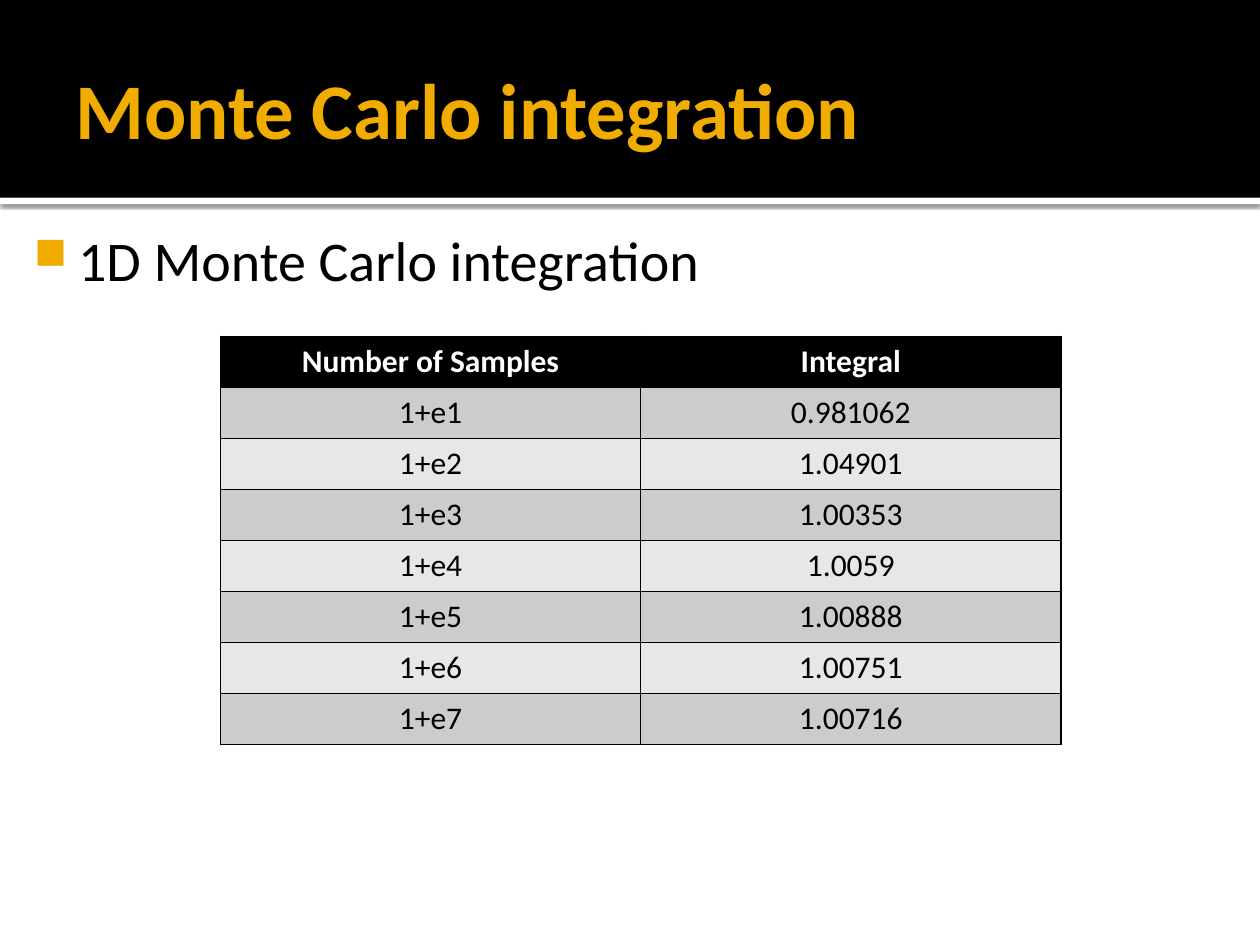
from dataclasses import dataclass

from lxml import etree
from pptx import Presentation
from pptx.dml.color import RGBColor
from pptx.enum.shapes import MSO_SHAPE
from pptx.enum.text import MSO_ANCHOR, PP_ALIGN
from pptx.oxml.ns import qn
from pptx.util import Inches, Pt

RECTANGLE = MSO_SHAPE.RECTANGLE
TOP, MIDDLE = MSO_ANCHOR.TOP, MSO_ANCHOR.MIDDLE
LEFT, CENTER = PP_ALIGN.LEFT, PP_ALIGN.CENTER


@dataclass(frozen=True)
class Theme:
    font: str = "Calibri"
    black: str = "000000"
    white: str = "FFFFFF"
    accent: str = "F0AD00"
    bands: tuple = ("CCCCCC", "E7E7E7")
    title_size: int = 45
    body_size: int = 32
    table_size: int = 18


THEME = Theme()
RESULTS = [
    ("Number of Samples", "Integral"),
    ("1+e1", "0.981062"),
    ("1+e2", "1.04901"),
    ("1+e3", "1.00353"),
    ("1+e4", "1.0059"),
    ("1+e5", "1.00888"),
    ("1+e6", "1.00751"),
    ("1+e7", "1.00716"),
]


def add_child(parent, tag, **attributes):
    child = etree.SubElement(parent, qn(tag))
    for name, value in attributes.items():
        child.set(name, str(value))
    return child


def write_text(text_frame, text, *, size, color, bold=False, align=LEFT):
    paragraph = text_frame.paragraphs[0]
    paragraph.alignment = align
    run = paragraph.add_run()
    run.text = text
    run.font.name = THEME.font
    run.font.size = Pt(size)
    run.font.bold = bold
    run.font.color.rgb = RGBColor.from_string(color)
    return paragraph


def add_text_box(slide, box, text, *, insets, anchor=TOP, **text_format):
    """Insets are left, top, right and bottom in inches."""
    text_frame = slide.shapes.add_textbox(*map(Inches, box)).text_frame
    text_frame.word_wrap = True
    text_frame.vertical_anchor = anchor
    (text_frame.margin_left, text_frame.margin_top,
     text_frame.margin_right, text_frame.margin_bottom) = map(Inches, insets)
    return write_text(text_frame, text, **text_format)


def add_bar(slide, box, color):
    shape = slide.shapes.add_shape(RECTANGLE, *map(Inches, box))
    shape.shadow.inherit = False
    shape.fill.solid()
    shape.fill.fore_color.rgb = RGBColor.from_string(color)
    shape.line.fill.background()
    return shape


def add_shadow(shape):
    effects = shape._element.spPr.find(qn("a:effectLst"))
    shadow = add_child(effects, "a:outerShdw", blurRad=Pt(2.5), dist=Pt(0.8),
                       dir=90 * 60000, algn="tl", rotWithShape=0)
    color = add_child(shadow, "a:srgbClr", val=THEME.black)
    add_child(color, "a:alpha", val=60000)


def add_header(slide, box):
    left, top, width, height = box
    add_shadow(add_bar(slide, (left, top + height, width, 0.05), THEME.white))
    add_bar(slide, box, THEME.black)
    add_text_box(slide, (left + 0.5, top + 0.17, width - 1, height - 0.2),
                 "Monte Carlo integration", insets=(0.1, 0.05, 0.05, 0.05),
                 anchor=MIDDLE, size=THEME.title_size, color=THEME.accent, bold=True)


def add_square_bullet(paragraph):
    properties = paragraph._p.get_or_add_pPr()
    properties.set("marL", str(Inches(0.48)))
    properties.set("indent", str(Inches(-0.35)))
    color = add_child(properties, "a:buClr")
    add_child(color, "a:srgbClr", val=THEME.accent)
    add_child(properties, "a:buSzPct", val=80000)
    add_child(properties, "a:buChar", char="■")


def add_body(slide, box):
    paragraph = add_text_box(slide, box, "1D Monte Carlo integration",
                             insets=(0.06, 0.1, 0.1, 0.05),
                             size=THEME.body_size, color=THEME.black)
    add_square_bullet(paragraph)


def set_cell_borders(cell):
    properties = cell._tc.get_or_add_tcPr()
    for position, side in enumerate(("a:lnL", "a:lnR", "a:lnT", "a:lnB")):
        line = add_child(properties, side, w=Pt(1))
        fill = add_child(line, "a:solidFill")
        add_child(fill, "a:srgbClr", val=THEME.black)
        properties.insert(position, line)


def add_results_table(slide, box):
    """The first row of RESULTS is the heading; the others alternate in colour."""
    table = slide.shapes.add_table(len(RESULTS), len(RESULTS[0]), *map(Inches, box)).table
    for row_index, values in enumerate(RESULTS):
        heading = row_index == 0
        fill = THEME.black if heading else THEME.bands[(row_index - 1) % 2]
        for column_index, value in enumerate(values):
            cell = table.cell(row_index, column_index)
            cell.fill.solid()
            cell.fill.fore_color.rgb = RGBColor.from_string(fill)
            set_cell_borders(cell)
            write_text(cell.text_frame, value, size=THEME.table_size, bold=heading,
                       color=THEME.white if heading else THEME.black, align=CENTER)


def main():
    presentation = Presentation()
    presentation.slide_width = Inches(10)
    presentation.slide_height = Inches(7.5)
    slide = presentation.slides.add_slide(presentation.slide_layouts[6])
    add_header(slide, (0, 0, 10, 1.57))
    add_body(slide, (0.08, 1.69, 9.83, 5.73))
    add_results_table(slide, (1.75, 2.67, 6.67, 3.24))
    presentation.save("out.pptx")


if __name__ == "__main__":
    main()
